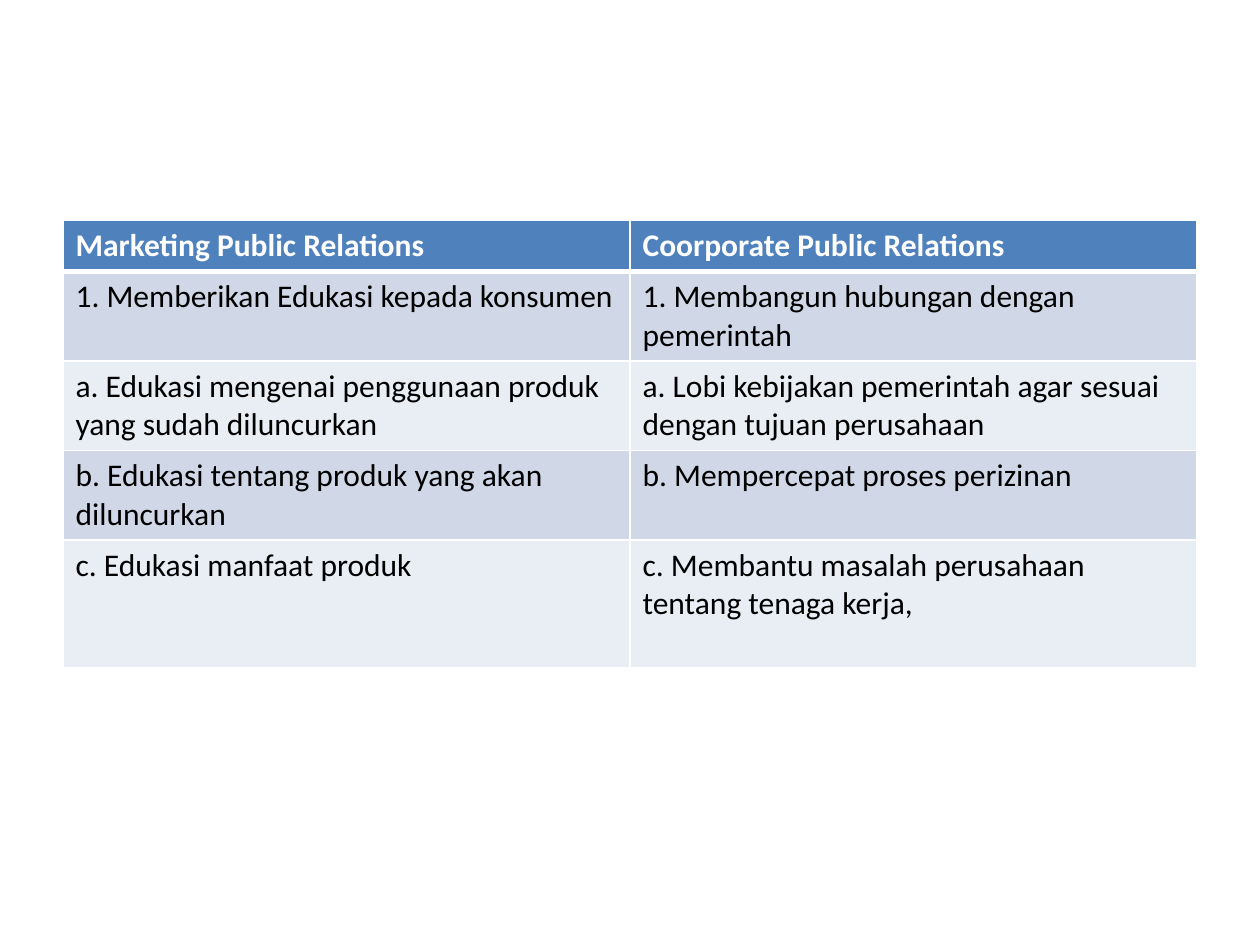
from dataclasses import dataclass

from lxml.etree import SubElement
from pptx import Presentation
from pptx.dml.color import RGBColor
from pptx.oxml.ns import qn
from pptx.util import Pt


@dataclass(frozen=True)
class Theme:
    font: str = "Calibri"
    size: float = 18
    header_fill: str = "4F81BD"
    header_text: str = "FFFFFF"
    body_text: str = "000000"
    bands: tuple = ("D0D8E8", "E9EDF4")
    border: str = "FFFFFF"
    thin: float = 1
    thick: float = 3


THEME = Theme()

ROWS = [
    ("Marketing Public Relations", "Coorporate Public Relations"),
    ("1. Memberikan Edukasi kepada konsumen",
     "1. Membangun hubungan dengan pemerintah"),
    ("a. Edukasi mengenai penggunaan produk yang sudah diluncurkan",
     "a. Lobi kebijakan pemerintah agar sesuai dengan tujuan perusahaan"),
    ("b. Edukasi tentang produk yang akan diluncurkan",
     "b. Mempercepat proses perizinan"),
    ("c. Edukasi manfaat produk",
     "c. Membantu masalah perusahaan tentang tenaga kerja,"),
]
ROW_HEIGHTS = [29.2, 51.1, 51.1, 51.1, 73.1]


def set_borders(cell, widths):
    """Draw the cell's edges; widths maps L, R, T, B to points, in that order."""
    tc_pr = cell._tc.get_or_add_tcPr()
    for side, width in widths.items():
        ln = SubElement(tc_pr, qn(f"a:ln{side}"), w=str(Pt(width)))
        fill = SubElement(ln, qn("a:solidFill"))
        SubElement(fill, qn("a:srgbClr"), val=THEME.border)


def fill_cell(cell, text, row):
    header = row == 0
    widths = dict.fromkeys("LRTB", THEME.thin)
    if header:
        widths["B"] = THEME.thick
    elif row == 1:
        widths["T"] = THEME.thick
    set_borders(cell, widths)

    color = THEME.header_fill if header else THEME.bands[(row - 1) % 2]
    cell.fill.solid()
    cell.fill.fore_color.rgb = RGBColor.from_string(color)

    r = cell.text_frame.paragraphs[0].add_run()
    r.text = text
    r.font.name = THEME.font
    r.font.size = Pt(THEME.size)
    r.font.bold = header
    r.font.color.rgb = RGBColor.from_string(
        THEME.header_text if header else THEME.body_text)


def add_comparison_table(s, left, top, width, row_heights):
    columns = len(ROWS[0])
    table = s.shapes.add_table(len(ROWS), columns, Pt(left), Pt(top),
                               Pt(width), Pt(sum(row_heights))).table
    for column in table.columns:
        column.width = Pt(width / columns)
    for i, (texts, height) in enumerate(zip(ROWS, row_heights)):
        table.rows[i].height = Pt(height)
        for j, text in enumerate(texts):
            fill_cell(table.cell(i, j), text, i)


def main():
    prs = Presentation()
    prs.slide_width, prs.slide_height = Pt(720), Pt(540)
    s = prs.slides.add_slide(prs.slide_layouts[6])
    add_comparison_table(s, 36, 126, 648, ROW_HEIGHTS)
    prs.save("out.pptx")


if __name__ == "__main__":
    main()
